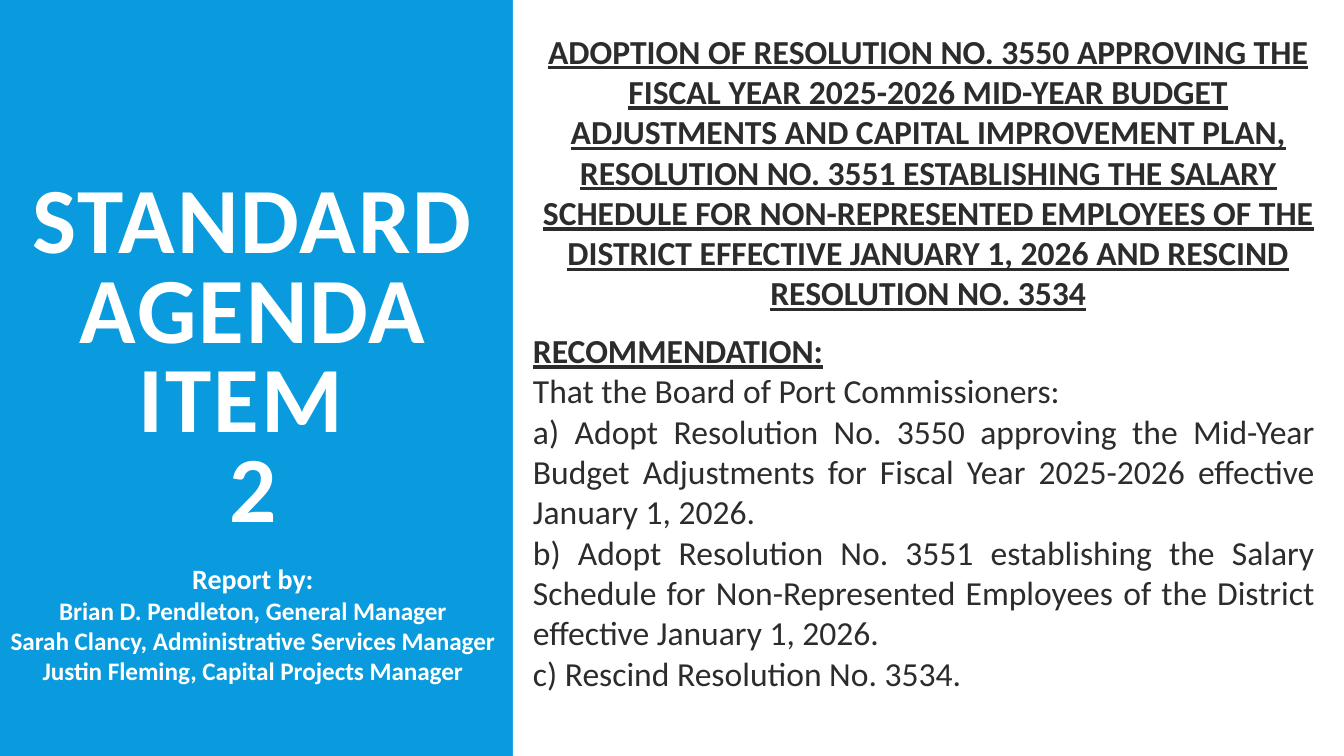
import pptx
import pptx.util
import pptx.dml.color
import pptx.enum.shapes
import pptx.enum.text
import pptx.oxml

Pt = pptx.util.Pt
PP_ALIGN = pptx.enum.text.PP_ALIGN
MSO_ANCHOR = pptx.enum.text.MSO_ANCHOR

BLUE = "099BDD"
WHITE = "FFFFFF"
DARK = "2C2C2C"

SLIDE_WIDTH, SLIDE_HEIGHT = 720, 405
PANEL_WIDTH = 274.8

HEADING = (
    "ADOPTION OF RESOLUTION NO. 3550 APPROVING THE FISCAL YEAR 2025-2026 "
    "MID-YEAR BUDGET ADJUSTMENTS AND CAPITAL IMPROVEMENT PLAN, "
    "RESOLUTION NO. 3551 ESTABLISHING THE SALARY SCHEDULE FOR "
    "NON-REPRESENTED EMPLOYEES OF THE DISTRICT EFFECTIVE JANUARY 1, 2026 "
    "AND RESCIND RESOLUTION NO. 3534"
)
REPORTERS = [
    "Report by:",
    "Brian D. Pendleton, General Manager",
    "Sarah Clancy, Administrative Services Manager",
    "Justin Fleming, Capital Projects Manager",
]
RECOMMENDATION = [
    "RECOMMENDATION:",
    "That the Board of Port Commissioners:",
    "a) Adopt Resolution No. 3550 approving the Mid-Year Budget Adjustments "
    "for Fiscal Year 2025-2026 effective January 1, 2026.",
    "b) Adopt Resolution No. 3551 establishing the Salary Schedule for "
    "Non-Represented Employees of the District effective January 1, 2026.",
    "c) Rescind Resolution No. 3534.",
]


def rgb(value):
    return pptx.dml.color.RGBColor.from_string(value)


def place(sp, left, top, width, height):
    sp.left, sp.top = Pt(left), Pt(top)
    sp.width, sp.height = Pt(width), Pt(height)


def format_paragraph(p, size, color, align, bold=True, underline=False):
    p.alignment = align
    for r in p.runs:
        r.font.name = "Calibri"
        r.font.size = Pt(size)
        r.font.bold = bold
        r.font.underline = underline
        r.font.color.rgb = rgb(color)


def set_text(sp, text, anchor=MSO_ANCHOR.TOP):
    tf = sp.text_frame
    tf.text = text
    tf.word_wrap = True
    tf.auto_size = pptx.enum.text.MSO_AUTO_SIZE.NONE
    tf.vertical_anchor = anchor
    return tf.paragraphs


def add_panel(s, left, width, color):
    sp = s.shapes.add_shape(
        pptx.enum.shapes.MSO_SHAPE.RECTANGLE,
        Pt(left), 0, Pt(width), Pt(SLIDE_HEIGHT),
    )
    sp.shadow.inherit = False
    sp.fill.solid()
    sp.fill.fore_color.rgb = rgb(color)
    sp.line.fill.background()


def add_textbox(s, text, left, top, width, height):
    sp = s.shapes.add_textbox(Pt(left), Pt(top), Pt(width), Pt(height))
    return set_text(sp, text)


def bring_to_front(sp):
    sp.element.getparent().append(sp.element)


def fill_title(s):
    sp = s.shapes.title
    place(sp, 9.8, 40.4, 252, 306)
    bring_to_front(sp)
    p = set_text(sp, "STANDARD AGENDA ITEM \v2", MSO_ANCHOR.MIDDLE)[0]
    p.line_spacing = 0.8
    format_paragraph(p, 50, WHITE, PP_ALIGN.CENTER)
    for r in p.runs:
        r._r.get_or_add_rPr().set("spc", "110")


def remove_bullet(p):
    pPr = p._p.get_or_add_pPr()
    pPr.set("marL", "0")
    pPr.set("indent", "0")
    pPr.append(pptx.oxml.parse_xml(
        '<a:buNone xmlns:a="http://schemas.openxmlformats.org/drawingml/2006/main"/>'
    ))


def fill_recommendation(s):
    sp = s.placeholders[1]
    place(sp, 278.3, 173.2, 433.5, 204)
    bring_to_front(sp)
    for i, p in enumerate(set_text(sp, "\n".join(RECOMMENDATION))):
        remove_bullet(p)
        p.space_before = Pt(0)
        align = PP_ALIGN.JUSTIFY if i else PP_ALIGN.LEFT
        format_paragraph(p, 18, DARK, align, bold=i == 0, underline=i == 0)


def add_reporters(s):
    paragraphs = add_textbox(s, "\n".join(REPORTERS), -2, 297.3, 275, 75)
    for i, p in enumerate(paragraphs):
        format_paragraph(p, 13.5 if i else 15, WHITE, PP_ALIGN.CENTER)


def add_heading(s):
    p = add_textbox(s, HEADING, PANEL_WIDTH, 12.8, 445, 160)[0]
    format_paragraph(p, 18, DARK, PP_ALIGN.CENTER, underline=True)


def main():
    prs = pptx.Presentation()
    prs.slide_width, prs.slide_height = Pt(SLIDE_WIDTH), Pt(SLIDE_HEIGHT)
    s = prs.slides.add_slide(prs.slide_layouts[1])
    add_panel(s, 0, PANEL_WIDTH, BLUE)
    add_panel(s, PANEL_WIDTH, SLIDE_WIDTH - PANEL_WIDTH, WHITE)
    fill_title(s)
    add_reporters(s)
    add_heading(s)
    fill_recommendation(s)
    prs.save("out.pptx")


if __name__ == "__main__":
    main()
